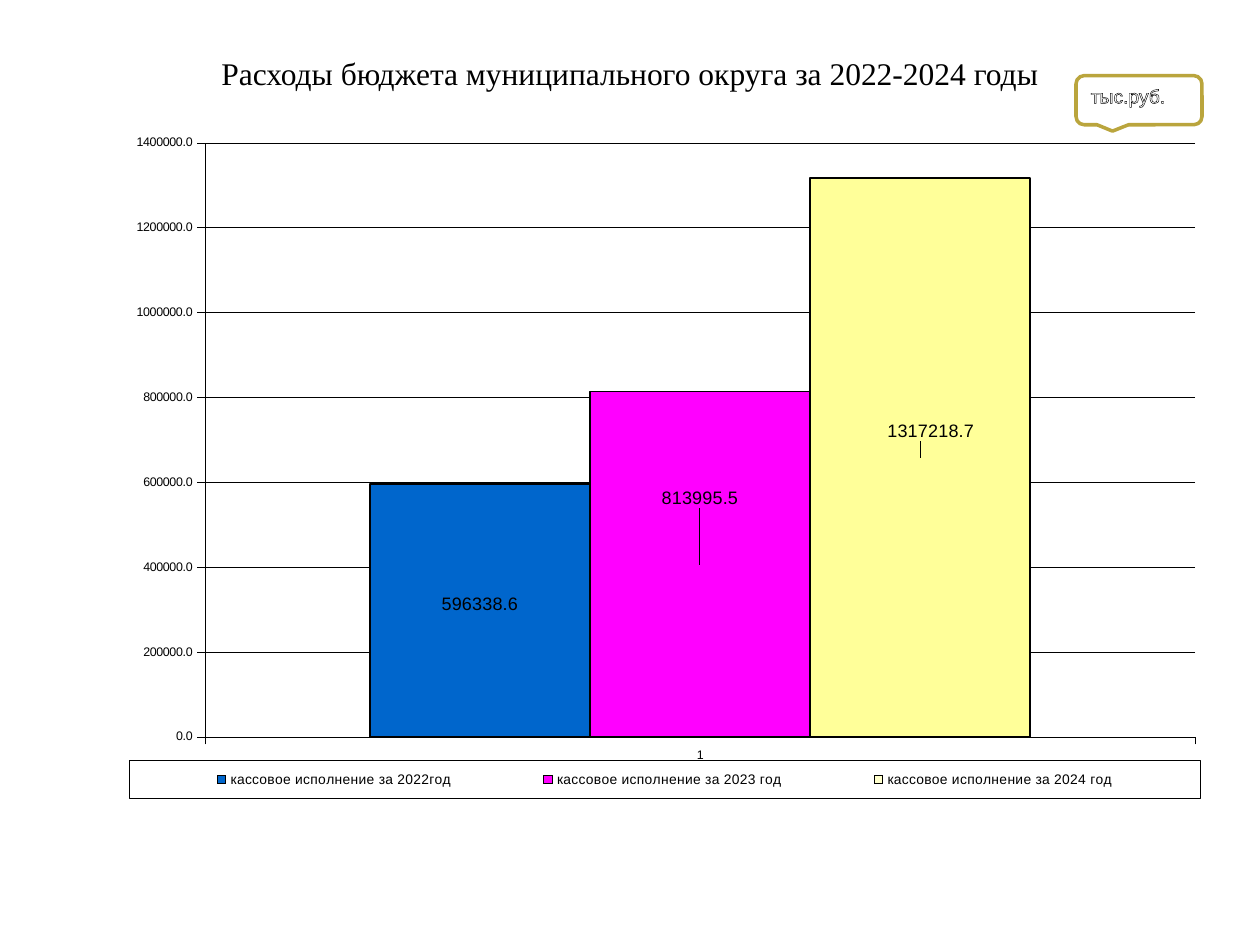
from lxml import etree
from pptx import Presentation
from pptx.chart.data import CategoryChartData
from pptx.dml.color import RGBColor
from pptx.enum.chart import XL_CHART_TYPE, XL_LABEL_POSITION as LabelPos
from pptx.enum.chart import XL_LEGEND_POSITION as LegendPos, XL_TICK_MARK as Tick
from pptx.enum.shapes import MSO_SHAPE
from pptx.enum.text import MSO_ANCHOR, PP_ALIGN
from pptx.oxml import parse_xml
from pptx.oxml.ns import nsdecls
from pptx.util import Pt

BLACK = RGBColor(0x00, 0x00, 0x00)
WHITE = RGBColor(0xFF, 0xFF, 0xFF)
BLUE = RGBColor(0x00, 0x66, 0xCC)
MAGENTA = RGBColor(0xFF, 0x00, 0xFF)
CREAM = RGBColor(0xFF, 0xFF, 0xCC)
YELLOW = RGBColor(0xFF, 0xFF, 0x99)
CYAN = RGBColor(0xCC, 0xFF, 0xFF)
AMBER = RGBColor(0xFF, 0xCC, 0x00)
GOLD = RGBColor(0xBA, 0xA5, 0x3D)

TITLE = "Расходы бюджета муниципального округа за 2022-2024 годы"
UNIT = "тыс.руб."
# name, value, series colour, bar colour, label colour, label shift (x, y)
SERIES = [
    ("кассовое исполнение за 2022год", 596338.6, BLUE, BLUE, CYAN, (0, -0.01)),
    ("кассовое исполнение за 2023 год", 813995.5, MAGENTA, MAGENTA, WHITE, (0, -0.1)),
    ("кассовое исполнение за 2024 год", 1317218.7, CREAM, YELLOW, AMBER, (0.01, -0.04)),
]
PLOT = (0.073, 0.014, 0.916, 0.893)
LEGEND = (0.003, 0.942, 0.991, 0.057)
HAIRLINE = Pt(0.22)


def set_font(font, size, name="Arial", color=BLACK):
    font.size, font.name = Pt(size), name
    font.color.rgb = color


def set_line(line, color, width):
    line.color.rgb = color
    line.width = width


def layout_xml(place, inner=False):
    """Manual chart layout from fractions: x, y and, for a frame, w, h."""
    is_frame = len(place) == 4
    tags = '<c:layoutTarget val="inner"/>' if inner else ""
    if is_frame:
        tags += '<c:xMode val="edge"/><c:yMode val="edge"/>'
    tags += "".join(f'<c:{k} val="{v}"/>' for k, v in zip("xywh", place))
    return parse_xml(f'<c:layout {nsdecls("c")}><c:manualLayout>{tags}'
                     "</c:manualLayout></c:layout>")


def box_xml(fill, line=""):
    return parse_xml(f'<c:spPr {nsdecls("c", "a")}><a:solidFill>'
                     f'<a:srgbClr val="{fill}"/></a:solidFill>{line}</c:spPr>')


def style_series(series, color, bar_color, label_color, shift):
    for fmt, fill in ((series.format, color), (series.points[0].format, bar_color)):
        fmt.fill.solid()
        fmt.fill.fore_color.rgb = fill
        set_line(fmt.line, BLACK, Pt(0.86))
    labels = series.data_labels
    labels.show_value = True
    labels.number_format, labels.number_format_is_linked = "0.0", False
    set_font(labels.font, 10.3)
    label = series.points[0].data_label
    set_font(label.font, 10.3)
    label.position = LabelPos.CENTER
    idx = series._element.xpath("c:dLbls/c:dLbl/c:idx")[0]
    num_fmt = parse_xml(f'<c:numFmt {nsdecls("c")} formatCode="0.0" sourceLinked="0"/>')
    for part in (box_xml(label_color), num_fmt, layout_xml(shift)):
        idx.addnext(part)


def add_budget_chart(slide):
    data = CategoryChartData(number_format="0.0")
    data.categories = ["1"]
    for name, value, *_ in SERIES:
        data.add_series(name, [value])
    chart = slide.shapes.add_chart(XL_CHART_TYPE.COLUMN_CLUSTERED, Pt(72), Pt(76.3),
                                   Pt(617.8), Pt(380.2), data).chart
    chart.has_title = False
    set_font(chart.font, 7.1)
    plot = chart.plots[0]
    plot.gap_width, plot.overlap, plot.vary_by_categories = 150, 0, False
    for series, (_, _, *style) in zip(plot.series, SERIES):
        style_series(series, *style)

    for axis in (chart.category_axis, chart.value_axis):
        axis.major_tick_mark, axis.minor_tick_mark = Tick.OUTSIDE, Tick.NONE
        set_line(axis.format.line, BLACK, HAIRLINE)
        set_font(axis.tick_labels.font, 7.1)
    axis = chart.value_axis
    axis.minimum_scale, axis.maximum_scale, axis.major_unit = 0, 1400000, 200000
    axis.tick_labels.number_format = "0.0"
    axis.tick_labels.number_format_is_linked = False
    set_line(axis.major_gridlines.format.line, BLACK, HAIRLINE)

    area = chart._chartSpace.xpath("c:chart/c:plotArea")[0]
    for old in area.xpath("c:layout"):
        area.remove(old)
    area.insert(0, layout_xml(PLOT, inner=True))

    chart.has_legend = True
    legend = chart.legend
    legend.position, legend.include_in_layout = LegendPos.RIGHT, False
    set_font(legend.font, 7.9)
    frame = legend._element
    for old in frame.xpath("c:layout"):
        frame.remove(old)
    frame.xpath("c:legendPos")[0].addnext(layout_xml(LEGEND))
    border = (f'<a:ln w="{HAIRLINE}"><a:solidFill><a:srgbClr val="{BLACK}"/>'
              "</a:solidFill></a:ln>")
    frame.xpath("c:txPr")[0].addprevious(box_xml(WHITE, border))


def add_title(slide):
    tf = slide.shapes.add_textbox(Pt(36), Pt(21.6), Pt(648), Pt(39.6)).text_frame
    tf.word_wrap = True
    tf.vertical_anchor = MSO_ANCHOR.MIDDLE
    p = tf.paragraphs[0]
    p.text, p.alignment = TITLE, PP_ALIGN.CENTER
    set_font(p.font, 18, "Times New Roman")


def add_unit_callout(slide):
    sp = slide.shapes.add_shape(MSO_SHAPE.ROUNDED_RECTANGULAR_CALLOUT,
                                Pt(614.9), Pt(43.2), Pt(72), Pt(28.1))
    sp.adjustments[0], sp.adjustments[1] = -0.21, 0.63
    sp.shadow.inherit = False
    sp.fill.solid()
    sp.fill.fore_color.rgb = WHITE
    set_line(sp.line, GOLD, Pt(2))
    tf = sp.text_frame
    tf.word_wrap = True
    tf.vertical_anchor = MSO_ANCHOR.TOP
    p = tf.paragraphs[0]
    p.alignment = PP_ALIGN.LEFT
    r = p.add_run()
    r.text = UNIT
    set_font(r.font, 11, color=WHITE)
    outline = parse_xml(f'<a:ln {nsdecls("a")} w="{Pt(0.75)}"><a:solidFill>'
                        f'<a:srgbClr val="{BLACK}"/></a:solidFill></a:ln>')
    r.font._element.insert(0, outline)


def main():
    prs = Presentation()
    prs.slide_width, prs.slide_height = Pt(720), Pt(540)
    slide = prs.slides.add_slide(prs.slide_layouts[6])
    add_budget_chart(slide)
    add_title(slide)
    add_unit_callout(slide)
    prs.save("out.pptx")


if __name__ == "__main__":
    main()
